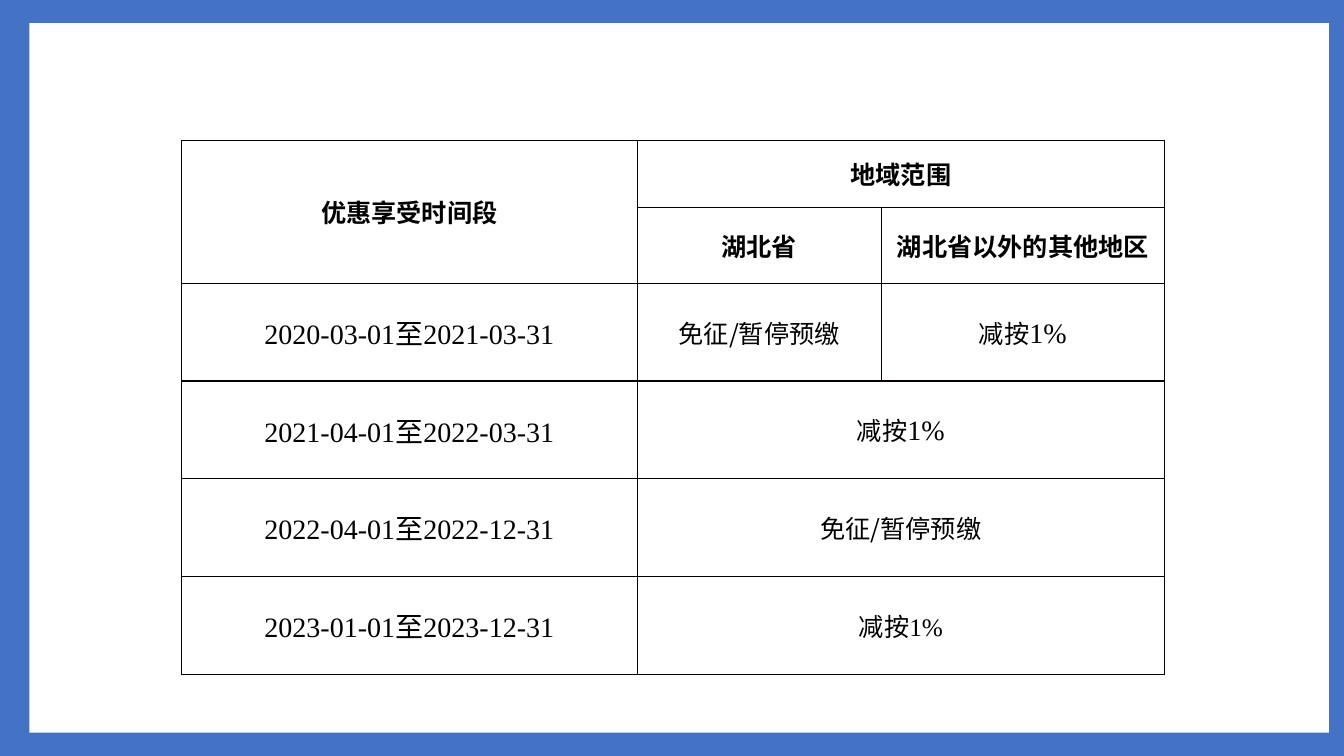
from lxml import etree
from pptx import Presentation
from pptx import util as u
from pptx.dml.color import RGBColor
from pptx.enum import shapes, text
from pptx.oxml import ns

CJK = "Noto Sans CJK SC"
LATIN = "Times New Roman"


def color(value):
    return RGBColor.from_string(value)


class SlideBuilder:
    ink = "000000"
    border = "080000"
    paper = "FFFFFF"
    frame = "4472C4"

    def __init__(self, slide):
        self.slide = slide

    def rectangle(self, left, top, width, height, fill):
        shape = self.slide.shapes.add_shape(
            shapes.MSO_SHAPE.RECTANGLE,
            u.Inches(left), u.Inches(top), u.Inches(width), u.Inches(height))
        shape.shadow.inherit = False
        shape.fill.solid()
        shape.fill.fore_color.rgb = color(fill)
        shape.line.fill.background()

    def table(self, left, top, widths, heights):
        table = self.slide.shapes.add_table(
            len(heights), len(widths), u.Inches(left), u.Inches(top),
            u.Inches(sum(widths)), u.Inches(sum(heights))).table
        table.first_row = False
        table.horz_banding = False
        for column, width in zip(table.columns, widths):
            column.width = u.Inches(width)
        for row, height in zip(table.rows, heights):
            row.height = u.Inches(height)
        for cell in table.iter_cells():
            self.style_cell(cell)
        return table

    def style_cell(self, cell):
        cell.margin_left = cell.margin_right = u.Inches(0.01)
        cell.margin_top = cell.margin_bottom = 0
        cell.vertical_anchor = text.MSO_ANCHOR.MIDDLE
        properties = cell._tc.get_or_add_tcPr()
        for side in ("a:lnL", "a:lnR", "a:lnT", "a:lnB"):
            line = etree.SubElement(properties, ns.qn(side), w=str(u.Pt(1)))
            fill = etree.SubElement(line, ns.qn("a:solidFill"))
            etree.SubElement(fill, ns.qn("a:srgbClr"), val=self.border)
        cell.fill.solid()
        cell.fill.fore_color.rgb = color(self.paper)

    def cell_text(self, cell, runs, bold=False):
        paragraph = cell.text_frame.paragraphs[0]
        paragraph.alignment = text.PP_ALIGN.CENTER
        for wording, size, font in runs:
            run = paragraph.add_run()
            run.text = wording
            run.font.size = u.Pt(size)
            run.font.bold = bold
            run.font.color.rgb = color(self.ink)
            run.font.name = font
            properties = run._r.get_or_add_rPr()
            etree.SubElement(properties, ns.qn("a:ea"), typeface=CJK)


def main():
    presentation = Presentation()
    presentation.slide_width = u.Inches(13.33)
    presentation.slide_height = u.Inches(7.5)
    builder = SlideBuilder(
        presentation.slides.add_slide(presentation.slide_layouts[6]))

    builder.rectangle(0, 0, 13.33, 7.5, builder.frame)
    builder.rectangle(0.29, 0.23, 12.89, 7.04, builder.paper)

    table = builder.table(1.8, 1.39, [4.52, 2.42, 2.81], [0.67, 0.75] + [0.97] * 4)
    table.cell(0, 0).merge(table.cell(1, 0))
    for row in (0, 3, 4, 5):
        table.cell(row, 1).merge(table.cell(row, 2))

    headers = {
        (0, 0): "优惠享受时间段",
        (0, 1): "地域范围",
        (1, 1): "湖北省",
        (1, 2): "湖北省以外的其他地区",
    }
    for (row, column), wording in headers.items():
        builder.cell_text(table.cell(row, column), [(wording, 18, CJK)], bold=True)

    exempt = [("免征/暂停预缴", 18, CJK)]
    reduced = [("减按", 18, CJK), ("1%", 20, LATIN)]
    reduced_small = [("减按", 18, CJK), ("1%", 18, LATIN)]
    periods = [
        ("2020-03-01至2021-03-31", [exempt, reduced]),
        ("2021-04-01至2022-03-31", [reduced]),
        ("2022-04-01至2022-12-31", [exempt]),
        ("2023-01-01至2023-12-31", [reduced_small]),
    ]
    for row, (period, policies) in enumerate(periods, start=2):
        builder.cell_text(table.cell(row, 0), [(period, 20, LATIN)])
        for column, policy in enumerate(policies, start=1):
            builder.cell_text(table.cell(row, column), policy)

    presentation.save("out.pptx")


if __name__ == "__main__":
    main()
